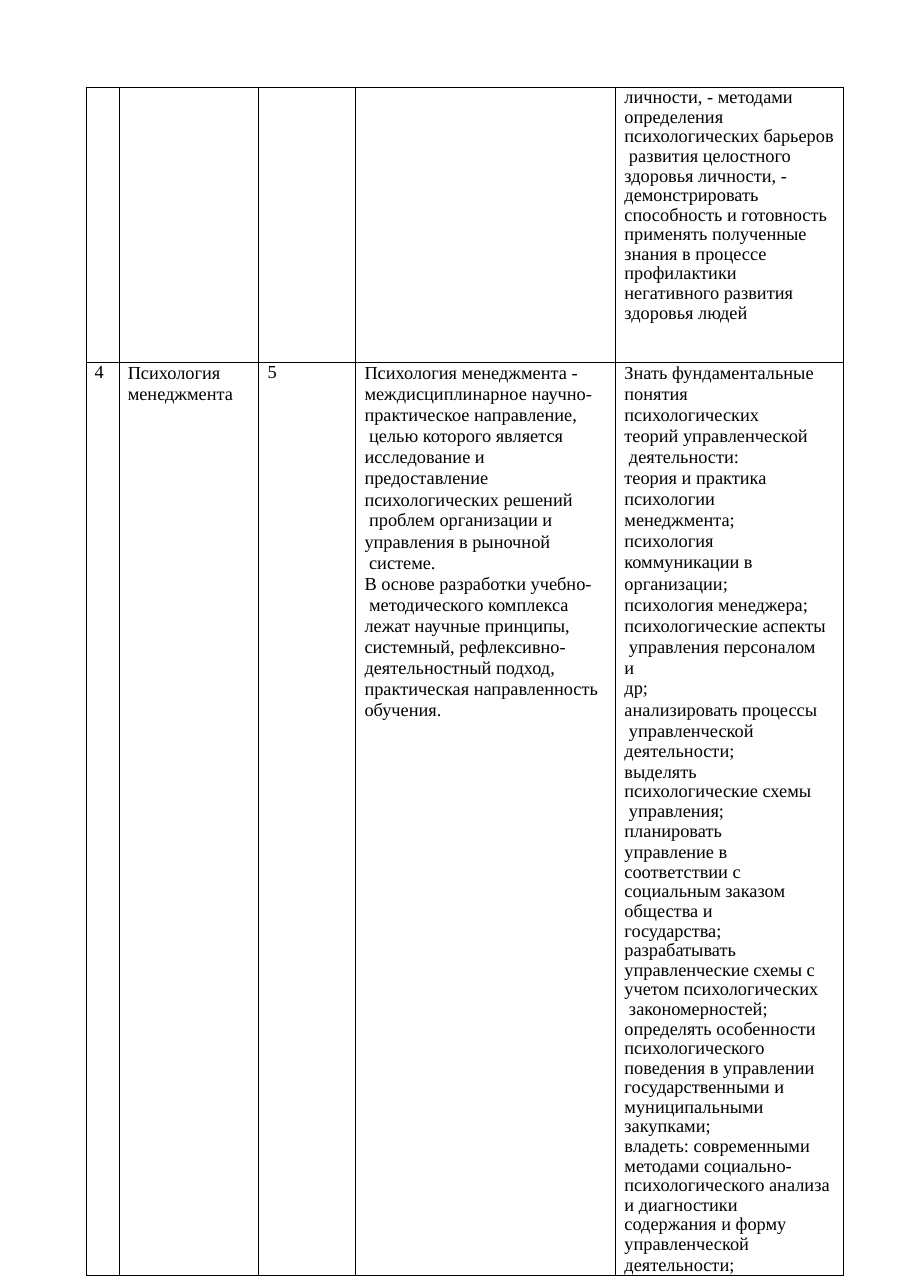
from dataclasses import dataclass
from lxml.etree import SubElement
from pptx import Presentation
from pptx.dml.color import RGBColor
from pptx.oxml import parse_xml
from pptx.oxml.ns import nsdecls, qn
from pptx.util import Inches, Pt


@dataclass(frozen=True)
class Theme:
    font: str = "Times New Roman"
    size: float = 12
    ink: str = "000000"
    border: float = 0.5
    indent: float = 0.08
    leading: float = 13.7   # points, exact
    tight: float = 0.96     # share of the font height


THEME = Theme()
EXACT, TIGHT = Pt(THEME.leading), THEME.tight

# Content: each cell is a list of paragraphs (line spacing, space before, lines)
HEALTH_SKILLS = [
    (Pt(13.2), 0, ["личности, - методами"]),
    (TIGHT, 0.3, ["определения", "психологических барьеров", " развития целостного",
                  "здоровья личности, -", "демонстрировать", "способность и готовность",
                  "применять полученные", "знания в процессе", "профилактики",
                  "негативного развития", "здоровья людей"]),
]
NUMBER = [(Pt(13.4), 0, ["4"])]
COURSE = [(EXACT, 0.1, ["Психология", "менеджмента"])]
CREDITS = [(Pt(13.4), 0, ["5"])]
SUMMARY = [
    (EXACT, 0.1, ["Психология менеджмента -", "междисциплинарное научно-"]),
    (EXACT, 0.2, ["практическое направление,", " целью которого является"]),
    (EXACT, 0.2, ["исследование и", "предоставление"]),
    (EXACT, 0.2, ["психологических решений", " проблем организации и"]),
    (EXACT, 0.2, ["управления в рыночной", " системе."]),
    (EXACT, 0.2, ["В основе разработки учебно-", " методического комплекса"]),
    (EXACT, 0.2, ["лежат научные принципы,", "системный, рефлексивно-"]),
    (EXACT, 0.2, ["деятельностный подход,", "практическая направленность"]),
    (Pt(13.6), 0, ["обучения."]),
]
OUTCOMES = [
    (EXACT, 0.1, ["Знать фундаментальные", "понятия", "психологических"]),
    (EXACT, 0.2, ["теорий управленческой", " деятельности:"]),
    (EXACT, 0.2, ["теория и практика", "психологии", "менеджмента;"]),
    (EXACT, 0.2, ["психология", "коммуникации в"]),
    (EXACT, 0.2, ["организации;", "психология менеджера;"]),
    (EXACT, 0.2, ["психологические аспекты", " управления персоналом", "и"]),
    (Pt(13.2), 0, ["др;"]),
    (Pt(13.9), 0.6, ["анализировать процессы", " управленческой"]),
    (Pt(13.1), 0, ["деятельности;"]),
    (TIGHT, 0.3, ["выделять", "психологические схемы", " управления;"]),
    (Pt(13.4), 0, ["планировать", "управление в"]),
    (TIGHT, 0.4, ["соответствии с", "социальным заказом", "общества и", "государства;",
                  "разрабатывать", "управленческие схемы с"]),
    (TIGHT, 0.1, ["учетом психологических", " закономерностей;", "определять особенности",
                  "психологического", "поведения в управлении", "государственными и",
                  "муниципальными", "закупками;"]),
    (TIGHT, 0.1, ["владеть: современными", "методами социально-",
                  "психологического анализа", "и диагностики", "содержания и форму",
                  "управленческой"]),
    (EXACT, 0, ["деятельности;"]),
]
ROWS = [
    [[], [], [], [], HEALTH_SKILLS],
    [NUMBER, COURSE, CREDITS, SUMMARY, OUTCOMES],
]

# Table grid in inches
LEFT, TOP = 0.78, 0.79
COLS = [0.3, 1.27, 0.88, 2.36, 2.07]
HEIGHTS = [2.5, 7.87]


def write_lines(p, lines, *, spacing, before):
    """Fill a paragraph with lines, keeping each break at the text size."""
    p.line_spacing, p.space_before = spacing, Pt(before)
    p._p.get_or_add_pPr().set("marL", str(Inches(THEME.indent)))
    for i, line in enumerate(lines):
        if i:
            p.add_line_break()
        r = p.add_run()
        r.text = line
        r.font.name, r.font.size = THEME.font, Pt(THEME.size)
        r.font.color.rgb = RGBColor.from_string(THEME.ink)
    for br in p._p.findall(qn("a:br")):
        SubElement(br, qn("a:rPr")).set("sz", str(int(THEME.size * 100)))


def draw_borders(cell):
    tc_pr = cell._tc.get_or_add_tcPr()
    for i, side in enumerate("LRTB"):
        tc_pr.insert(i, parse_xml(
            f'<a:ln{side} {nsdecls("a")} w="{Pt(THEME.border)}"><a:solidFill>'
            f'<a:srgbClr val="{THEME.ink}"/></a:solidFill></a:ln{side}>'))


def fill_cell(cell, paragraphs):
    cell.margin_left = cell.margin_right = cell.margin_top = cell.margin_bottom = 0
    cell.fill.background()
    draw_borders(cell)
    tf = cell.text_frame
    for i, (spacing, before, lines) in enumerate(paragraphs):
        p = tf.add_paragraph() if i else tf.paragraphs[0]
        write_lines(p, lines, spacing=spacing, before=before)


def main():
    prs = Presentation()
    prs.slide_width, prs.slide_height = Inches(8.28), Inches(11.69)
    s = prs.slides.add_slide(prs.slide_layouts[6])

    # Course table
    table = s.shapes.add_table(len(ROWS), len(COLS), Inches(LEFT), Inches(TOP),
                               Inches(sum(COLS)), Inches(sum(HEIGHTS))).table
    table.first_row = table.horz_banding = False
    for col, width in zip(table.columns, COLS):
        col.width = Inches(width)
    for row, height, contents in zip(table.rows, HEIGHTS, ROWS):
        row.height = Inches(height)
        for cell, paragraphs in zip(row.cells, contents):
            fill_cell(cell, paragraphs)

    prs.save("out.pptx")


if __name__ == "__main__":
    main()
